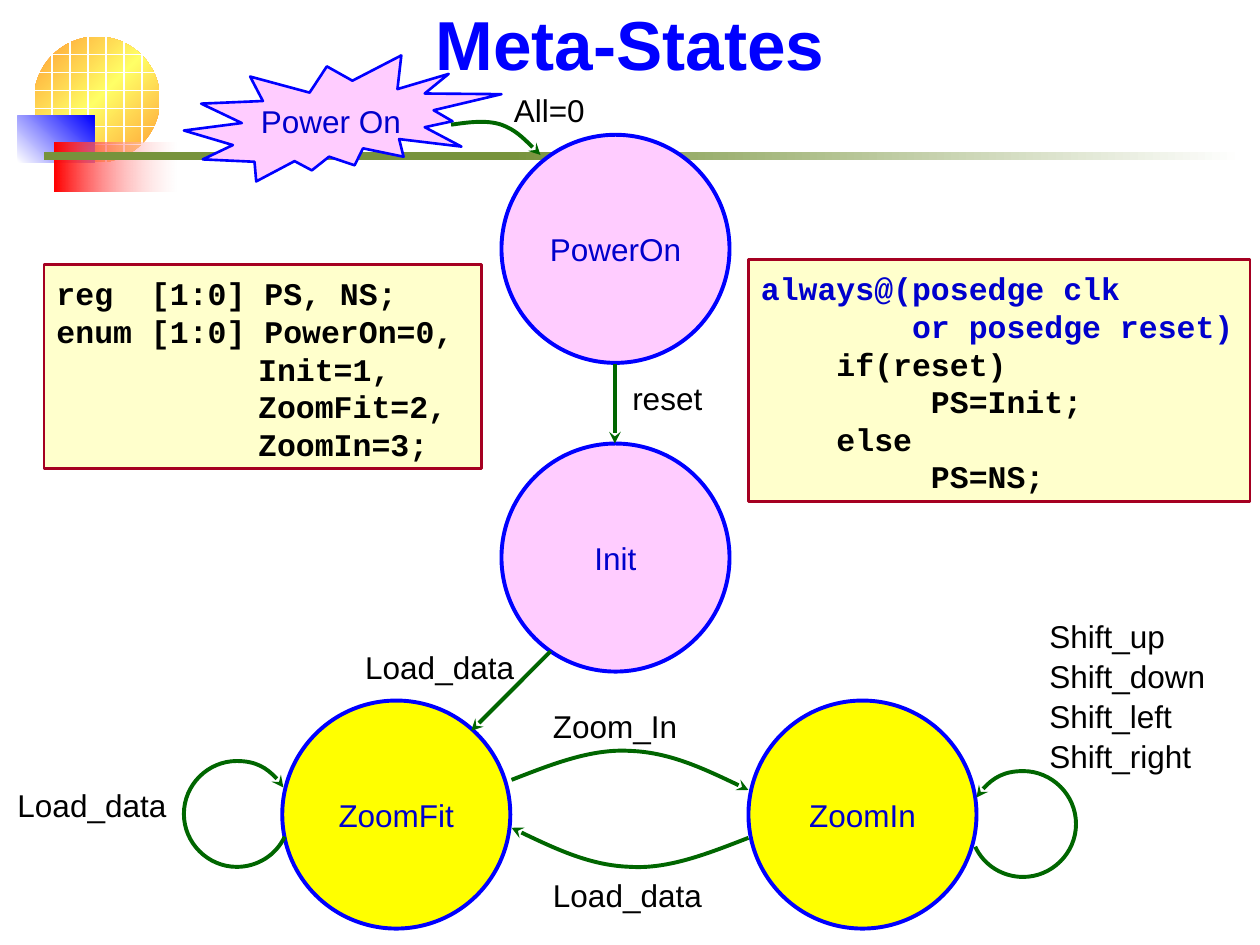
"""Builds the Meta-States slide: a state diagram with two Verilog listings."""
from dataclasses import dataclass
from itertools import product
from typing import NamedTuple

from lxml.etree import SubElement
from pptx import Presentation
from pptx.dml.color import RGBColor
from pptx.enum.shapes import MSO_CONNECTOR as Connector, MSO_SHAPE as Preset
from pptx.enum.text import MSO_ANCHOR as Anchor, PP_ALIGN as Align
from pptx.oxml.ns import qn
from pptx.util import Inches, Pt

COLUMNS, ROWS = 100, 75
CELL = Inches(10) // COLUMNS
CHARACTER = Inches(0.15)
COLORS = {
    "white": "FFFFFF", "black": "000000", "blue": "0000FF", "ink": "0000CC",
    "pink": "FFCCFF", "yellow": "FFFF00", "cream": "FFFFCC", "maroon": "A50021",
    "arrow": "006600", "olive": "77933C", "red": "FF0000",
    "orange": "FF9933", "lemon": "FFFF66",
}
LABEL_FONT = {"name": "Arial", "size": Pt(18), "bold": False}
CODE_FONT = {"name": "Courier New", "size": Pt(18), "bold": True}
TITLE_FONT = {"name": "Arial", "size": Pt(39.6), "bold": True}


class Box(NamedTuple):
    left: float
    top: float
    width: float
    height: float


class Stop(NamedTuple):
    position: int
    color: str
    alpha: int = 100


class CodeLine(NamedTuple):
    indent: int
    text: str
    color: str = "black"


@dataclass
class Node:
    text: str
    box: Box
    fill: str
    preset: Preset = Preset.OVAL
    line_width: float = 2.25


@dataclass
class Label:
    text: str
    left: float
    top: float
    width: float


@dataclass
class Listing:
    box: Box
    lines: list


def circle(text: str, left: float, top: float, fill: str) -> Node:
    return Node(text, Box(left, top, 18.1, 18.1), fill)


NODES = [
    circle("PowerOn", 39.8, 10.7, "pink"),
    circle("Init", 39.8, 35.2, "pink"),
    circle("ZoomFit", 22.4, 55.6, "yellow"),
    circle("ZoomIn", 59.4, 55.6, "yellow"),
    Node("Power On", Box(14.6, 4.4, 25.2, 10), "pink", Preset.EXPLOSION2, 1.5),
]
LABELS = [
    Label("Load_data", 28, 50.9, 13.8),
    Label("Load_data", 0.4, 61.9, 13.8),
    Label("Load_data", 42.9, 69, 13.8),
    Label("Zoom_In", 42.9, 55.6, 11.9),
    Label("All=0", 39.8, 6.7, 7.6),
    Label("reset", 49.2, 29.6, 7.6),
] + [
    Label(text, 82.3, 48.5 + 3.16 * row, width)
    for row, (text, width) in enumerate(
        [("Shift_up", 11.2), ("Shift_down", 14.4), ("Shift_left", 11.7), ("Shift_right", 13.3)])
]
LISTINGS = [
    Listing(Box(3.5, 21, 34.7, 16.2), [
        CodeLine(0, "reg  [1:0] PS, NS;"),
        CodeLine(0, "enum [1:0] PowerOn=0,"),
        *(CodeLine(10.67, text) for text in ("Init=1,", "ZoomFit=2,", "ZoomIn=3;")),
    ]),
    Listing(Box(59.4, 20.6, 39.8, 19.2), [
        CodeLine(0, "always@(posedge clk", "ink"),
        CodeLine(8, "or posedge reset)", "ink"),
        CodeLine(4, "if(reset)"),
        CodeLine(9, "PS=Init;"),
        CodeLine(4, "else"),
        CodeLine(9, "PS=NS;"),
    ]),
]
STRAIGHT_ARROWS = [((48.8, 28.9), (48.8, 35.2)), ((43.7, 51.7), (37.4, 58))]
ZOOM_CURVE = [(40.6, 61.9), (43.7, 60.7), (46.9, 59.4), (50, 59.6),
              (53.1, 59.7), (56.3, 61.2), (59.4, 62.7)]
SELF_LOOP = [(22.6, 66.4), (21.9, 67.9), (20.4, 68.8), (18.8, 68.8),
             (16.5, 68.8), (14.6, 66.9), (14.6, 64.6), (14.6, 62.3),
             (16.5, 60.4), (18.8, 60.4), (20.3, 60.4), (21.7, 61.2), (22.5, 62.5)]
START_CURVE = [(35.8, 9.9), (37.2, 9.7), (38.6, 9.5), (39.8, 9.9),
               (40.9, 10.3), (41.9, 11.3), (42.9, 12.3)]
CURVES = [
    ZOOM_CURVE,
    [(COLUMNS - x, 128.4 - y) for x, y in ZOOM_CURVE],
    SELF_LOOP,
    [(COLUMNS - x, y + 0.8) for x, y in SELF_LOOP],
    START_CURVE,
]
BANDS = [
    (Box(1.4, 9.2, 6.1, 3.7), 315, [Stop(0, "white"), Stop(100, "blue")]),
    (Box(4.3, 11.3, 9.7, 3.9), 0, [Stop(0, "red"), Stop(100, "white", 29)]),
    (Box(3.5, 12.1, 95.1, 0.6), 0, [Stop(39, "olive"), Stop(100, "white")]),
]


def cells(*values: float) -> list:
    return [round(value * CELL) for value in values]


def rgb(color: str) -> RGBColor:
    return RGBColor.from_string(COLORS[color])


def write(paragraph, text: str, font: dict, color: str) -> None:
    run = paragraph.add_run()
    run.text = text
    for name, value in font.items():
        setattr(run.font, name, value)
    run.font.color.rgb = rgb(color)


def add_preset(slide, preset: Preset, box: Box, fill=None, line=None, line_width=0.75):
    shape = slide.shapes.add_shape(preset, *cells(*box))
    shape.shadow.inherit = False
    for target, color in ((shape.fill, fill), (shape.line.fill, line)):
        if color:
            target.solid()
            target.fore_color.rgb = rgb(color)
        else:
            target.background()
    if line:
        shape.line.width = Pt(line_width)
    return shape


def add_gradient(slide, preset: Preset, box: Box, angle: int, stops: list) -> None:
    shape = add_preset(slide, preset, box)
    shape.fill.gradient()
    gradient = shape.element.spPr.find(qn("a:gradFill"))
    stop_list = gradient.find(qn("a:gsLst"))
    for old in list(stop_list):
        stop_list.remove(old)
    for stop in stops:
        entry = SubElement(stop_list, qn("a:gs"), pos=str(stop.position * 1000))
        color = SubElement(entry, qn("a:srgbClr"), val=COLORS[stop.color])
        if stop.alpha < 100:
            SubElement(color, qn("a:alpha"), val=str(stop.alpha * 1000))
    gradient.find(qn("a:lin")).set("ang", str(angle * 60000))


def add_decoration(slide) -> None:
    globe, count = Box(2.7, 2.9, 10, 10), 7
    side = globe.width / count
    add_gradient(slide, Preset.OVAL, globe, 45,
                 [Stop(0, "orange"), Stop(50, "lemon"), Stop(100, "orange")])
    for column, row in product(range(count), repeat=2):
        tile = Box(globe.left + column * side, globe.top + row * side, side, side)
        add_preset(slide, Preset.RECTANGLE, tile, line="white")
    for box, angle, stops in BANDS:
        add_gradient(slide, Preset.RECTANGLE, box, angle, stops)


def add_listing(slide, listing: Listing) -> None:
    shape = add_preset(slide, Preset.RECTANGLE, listing.box, "cream", "maroon", 1.5)
    frame = shape.text_frame
    frame.vertical_anchor, frame.margin_top = Anchor.TOP, Inches(0.08)
    for index, line in enumerate(listing.lines):
        paragraph = frame.add_paragraph() if index else frame.paragraphs[0]
        paragraph.alignment, paragraph.line_spacing = Align.LEFT, Pt(21.5)
        paragraph._p.get_or_add_pPr().set("marL", str(round(line.indent * CHARACTER)))
        write(paragraph, line.text, CODE_FONT, line.color)


def add_node(slide, node: Node) -> None:
    shape = add_preset(slide, node.preset, node.box, node.fill, "blue", node.line_width)
    frame = shape.text_frame
    frame.word_wrap, frame.vertical_anchor = False, Anchor.MIDDLE
    frame.paragraphs[0].alignment = Align.CENTER
    write(frame.paragraphs[0], node.text, LABEL_FONT, "ink")


def add_label(slide, label: Label) -> None:
    frame = slide.shapes.add_textbox(*cells(label.left, label.top, label.width, 4)).text_frame
    frame.word_wrap = False
    write(frame.paragraphs[0], label.text, LABEL_FONT, "black")


def style_arrow(shape) -> None:
    shape.line.color.rgb = rgb("arrow")
    shape.line.width = Pt(2.25)
    SubElement(shape.line._get_or_add_ln(), qn("a:tailEnd"), type="stealth")


def add_straight_arrow(slide, start: tuple, end: tuple) -> None:
    connector = slide.shapes.add_connector(Connector.STRAIGHT, *cells(*start, *end))
    style_arrow(connector)
    SubElement(connector._element.spPr, qn("a:effectLst"))


def add_curved_arrow(slide, points: list) -> None:
    start, *rest = [cells(*point) for point in points]
    builder = slide.shapes.build_freeform(*start)
    builder.add_line_segments(rest, close=False)
    shape = builder.convert_to_shape()
    shape.shadow.inherit = False
    shape.fill.background()
    style_arrow(shape)
    outline = next(shape.element.iter(qn("a:path")))
    segments = outline.findall(qn("a:lnTo"))
    for first in range(0, len(segments), 3):
        curve = SubElement(outline, qn("a:cubicBezTo"))
        for segment in segments[first:first + 3]:
            curve.append(segment[0])
            outline.remove(segment)


def add_title(slide, text: str) -> None:
    title = slide.shapes.title
    geometry = zip(("left", "top", "width", "height"), cells(0, 0, COLUMNS, 6.8))
    for name, value in geometry:
        setattr(title, name, value)
    title.text_frame.vertical_anchor = Anchor.MIDDLE
    title.text_frame.paragraphs[0].alignment = Align.CENTER
    write(title.text_frame.paragraphs[0], text, TITLE_FONT, "blue")


def main() -> None:
    presentation = Presentation()
    presentation.slide_width, presentation.slide_height = cells(COLUMNS, ROWS)
    slide = presentation.slides.add_slide(presentation.slide_layouts.get_by_name("Title Only"))
    add_title(slide, "Meta-States")
    add_decoration(slide)
    for draw, items in ((add_listing, LISTINGS), (add_node, NODES),
                        (add_curved_arrow, CURVES), (add_label, LABELS)):
        for item in items:
            draw(slide, item)
    for start, end in STRAIGHT_ARROWS:
        add_straight_arrow(slide, start, end)
    presentation.save("out.pptx")


if __name__ == "__main__":
    main()
